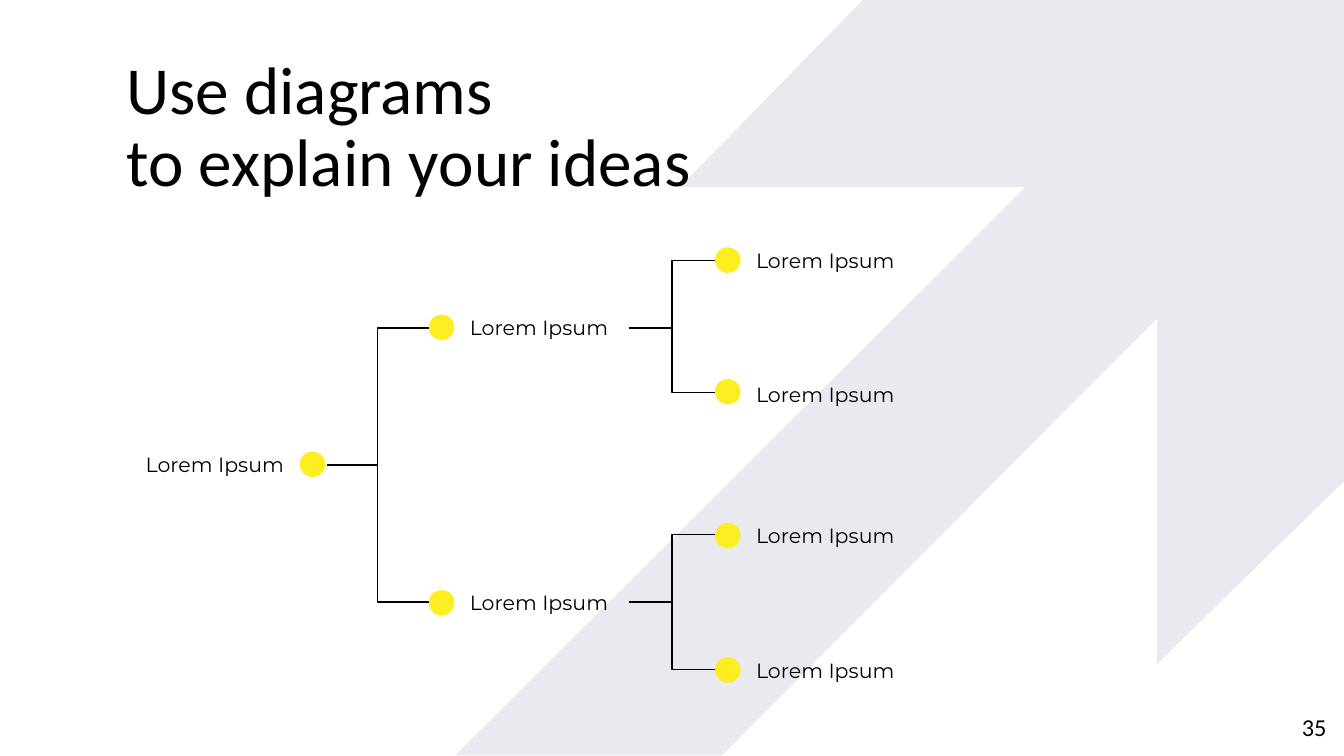
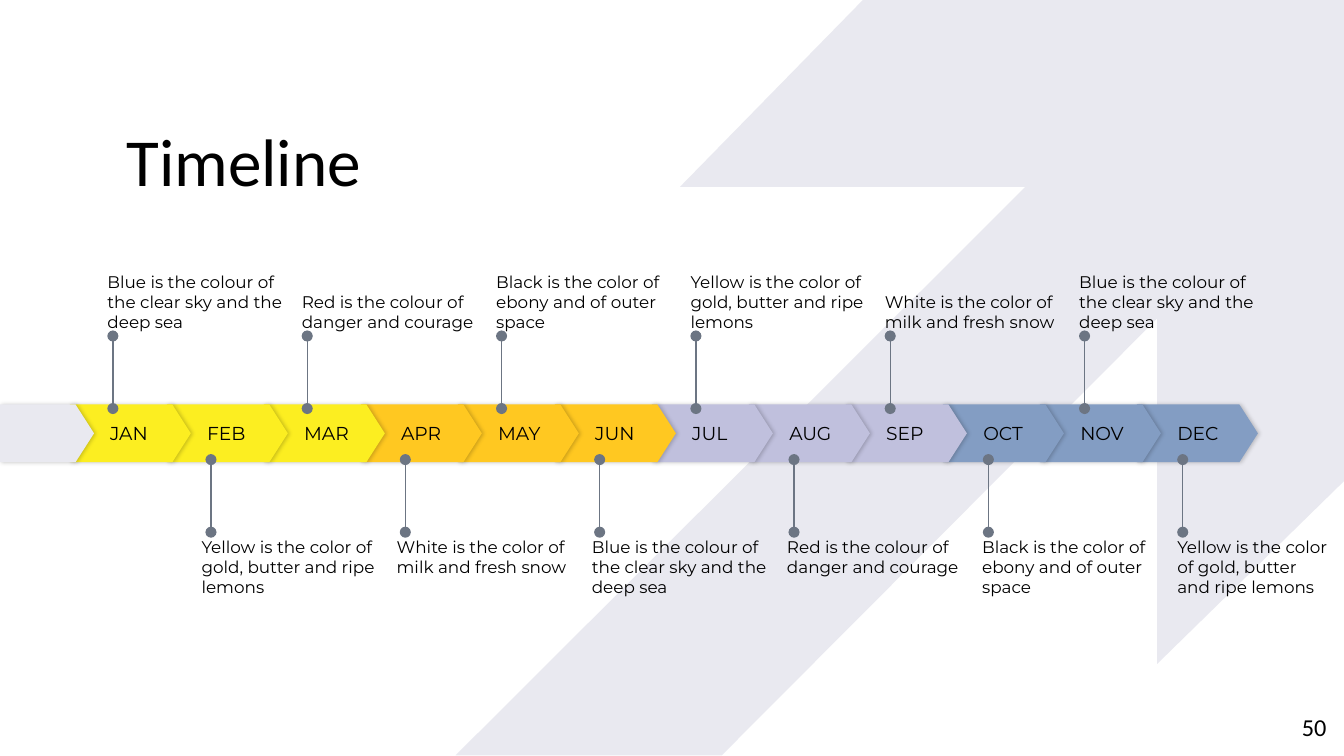
from lxml import etree
from pptx import Presentation
from pptx.dml.color import RGBColor
from pptx.enum.shapes import MSO_CONNECTOR, MSO_SHAPE
from pptx.enum.text import MSO_ANCHOR, MSO_AUTO_SIZE, PP_ALIGN
from pptx.oxml.ns import qn
from pptx.util import Inches, Pt

ELBOW, LINE = MSO_CONNECTOR.ELBOW, MSO_CONNECTOR.STRAIGHT
ROUND, DOT, ARROW = MSO_SHAPE.ROUNDED_RECTANGLE, MSO_SHAPE.OVAL, MSO_SHAPE.PENTAGON
TOP, MID, LOW = MSO_ANCHOR.TOP, MSO_ANCHOR.MIDDLE, MSO_ANCHOR.BOTTOM
LEFT, RIGHT = PP_ALIGN.LEFT, PP_ALIGN.RIGHT
FIXED = MSO_AUTO_SIZE.NONE

BLACK, GREY, PALE = "000000", "6C7583", "E9E9F0"
YELLOW, AMBER, LILAC, BLUE = "FCEE21", "FFC821", "C0C0DD", "839DC3"
HEAD, BODY = "Calibri", "Montserrat"


def paint(fill, color):
    if color is None:
        fill.background()
    else:
        fill.solid()
        fill.fore_color.rgb = RGBColor.from_string(color)


def write(shape, text, size, face=BODY, anchor=MID, align=LEFT, pad=(0, 0, 0, 0)):
    frame = shape.text_frame
    frame.text = text
    frame.word_wrap = True
    frame.auto_size = FIXED
    frame.vertical_anchor = anchor
    (frame.margin_left, frame.margin_top,
     frame.margin_right, frame.margin_bottom) = map(Inches, pad)
    para = frame.paragraphs[0]
    para.alignment = align
    para.font.size = Pt(size)
    para.font.name = face
    paint(para.font.fill, BLACK)
    return para


prs = Presentation()
prs.slide_width = Inches(10)
prs.slide_height = prs.slide_width * 9 // 16

band = [(506, 139), (763, 139), (339, 562), (537, 562), (861, 237),
        (861, 494), (1000, 358), (1000, 0)]
for head, page in (("Use diagrams\vto explain your ideas", "35"), ("Timeline", "50")):
    slide = prs.slides.add_slide(prs.slide_layouts[5])
    title = slide.shapes.title
    title.left, title.top = Inches(0.94), Inches(0.95)
    title.width, title.height = Inches(6.69), Inches(0.55)
    write(title, head, 36, HEAD, LOW).line_spacing = 0.9

    pen = slide.shapes.build_freeform(642, 0, scale=Inches(0.01))
    pen.add_line_segments(band, close=True)
    back = pen.convert_to_shape()
    back.shadow.inherit = False
    paint(back.fill, PALE)
    paint(back.line.fill, None)
    title._element.addprevious(back._element)

    num = slide.shapes.add_textbox(Inches(9.27), Inches(5.19), Inches(0.6), Inches(0.43))
    write(num, page, 13, HEAD, align=RIGHT)

tree, plan = prs.slides

forks = [(2.43, 3.46, 3.19, (4.48, 2.44)),
         (4.68, 2.44, 5.32, (1.94, 2.92)),
         (4.68, 4.48, 5.32, (3.98, 4.98))]
for left, mid, right, ends in forks:
    for end in ends:
        link = tree.shapes.add_connector(
            ELBOW, Inches(left), Inches(mid), Inches(right), Inches(end))
        paint(link.line.fill, BLACK)

nodes = [(5.32, 1.84, 5.51, 1.76, LEFT), (3.19, 2.34, 3.38, 2.26, LEFT),
         (2.23, 3.36, 0.94, 3.28, RIGHT), (3.19, 4.39, 3.38, 4.31, LEFT),
         (5.32, 2.82, 5.51, 2.76, LEFT), (5.32, 3.89, 5.51, 3.81, LEFT),
         (5.32, 4.89, 5.51, 4.81, LEFT)]
for dot_x, dot_y, x, y, align in nodes:
    group = tree.shapes.add_group_shape().shapes
    label = group.add_shape(ROUND, Inches(x), Inches(y), Inches(1.29), Inches(0.35))
    write(label, "Lorem Ipsum", 11, align=align, pad=(0.1, 0.1, 0.1, 0.1))
    dot = group.add_shape(DOT, Inches(dot_x), Inches(dot_y), Inches(0.19), Inches(0.19))
    for shape, color in ((label, None), (dot, YELLOW)):
        shape.shadow.inherit = False
        paint(shape.fill, color)
        paint(shape.line.fill, None)

months = "JAN FEB MAR APR MAY JUN JUL AUG SEP OCT NOV DEC".split()
hues = [YELLOW, AMBER, LILAC, BLUE]
steps = [(0.52 + 7.94 / 11 * i, 0.9, name, hues[i // 3]) for i, name in enumerate(months)]
steps.insert(0, (0, 0.7, "", PALE))
for left, width, name, color in reversed(steps):
    step = plan.shapes.add_shape(ARROW, Inches(left), Inches(3.01), Inches(width), Inches(0.43))
    step.adjustments[0] = 0.32
    step.shadow.inherit = False
    paint(step.fill, color)
    paint(step.line.fill, None)
    glow = etree.SubElement(
        step._element.spPr.find(qn("a:effectLst")), qn("a:outerShdw"),
        blurRad=str(Pt(2.2)), dist=str(Pt(0.8)), dir="0", algn="ctr", rotWithShape="0")
    tint = etree.SubElement(glow, qn("a:srgbClr"), val=BLACK)
    etree.SubElement(tint, qn("a:alpha"), val="20000")
    if name:
        write(step, name, 10, pad=(0.3, 0, 0, 0))

facts = ["Blue is the colour of the clear sky and the deep sea",
         "Red is the colour of danger and courage",
         "Black is the color of ebony and of outer space",
         "Yellow is the color of gold, butter and ripe lemons",
         "White is the color of milk and fresh snow"]
rows = [(0.84, 3.04, 2.5, 0.8, 7.23, 1.89, LOW, 0),
        (1.57, 3.96, 3.42, 1.5, 7.26, 3.99, TOP, 3)]
for pin_x, start, end, note_x, span, note_y, anchor, shift in rows:
    for i in range(6):
        x = Inches(pin_x + 7.23 / 5 * i)
        pin = plan.shapes.add_connector(LINE, x, Inches(start), x, Inches(end))
        paint(pin.line.fill, GREY)
        for tip in ("a:headEnd", "a:tailEnd"):
            etree.SubElement(pin._element.spPr.find(qn("a:ln")), qn(tip), type="oval")
        left = note_x + span / 5 * i
        note = plan.shapes.add_textbox(
            Inches(left), Inches(note_y), Inches(min(1.37, 9.89 - left)), Inches(0.58))
        write(note, facts[(i + shift) % 5], 9, anchor=anchor)

for slide in prs.slides:
    for wire in slide.shapes:
        if wire._element.tag == qn("p:cxnSp"):
            wire.line.width = Pt(0.75)
            etree.SubElement(wire._element.spPr, qn("a:effectLst"))

prs.save("out.pptx")
